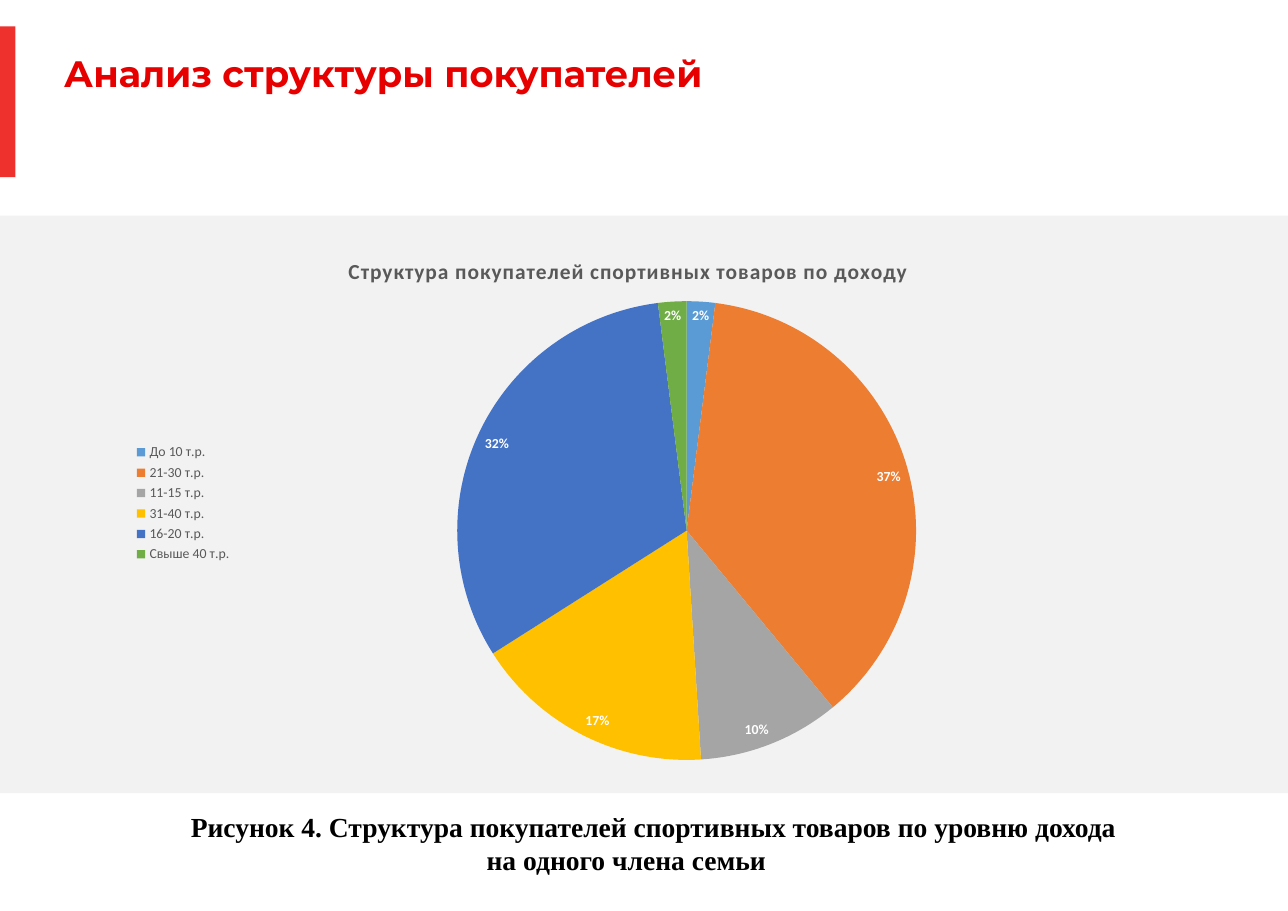
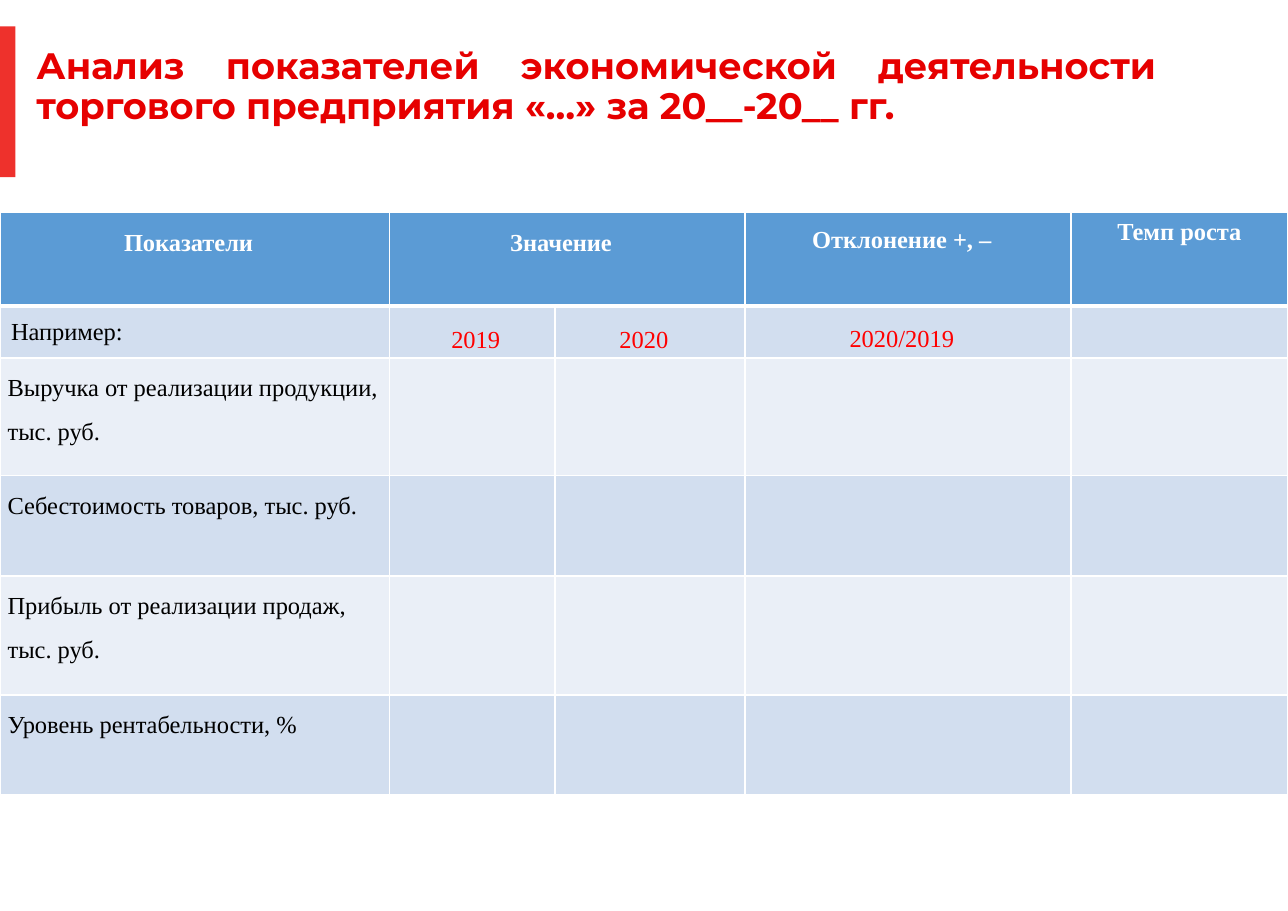
from dataclasses import dataclass, replace

from lxml.etree import SubElement
from pptx import Presentation
from pptx.chart.data import CategoryChartData
from pptx.dml.color import RGBColor
from pptx.enum.chart import XL_CHART_TYPE, XL_LABEL_POSITION, XL_LEGEND_POSITION
from pptx.enum.shapes import MSO_SHAPE
from pptx.enum.text import MSO_ANCHOR, MSO_AUTO_SIZE, PP_ALIGN
from pptx.oxml.ns import qn
from pptx.oxml.xmlchemy import BaseOxmlElement
from pptx.presentation import Presentation as Deck
from pptx.slide import Slide
from pptx.table import _Cell as Cell
from pptx.text.text import Font, TextFrame
from pptx.util import Pt

COLORS = {
    "title": "E60000", "bar": "EE312C", "band": "F2F2F2",
    "black": "000000", "white": "FFFFFF", "red": "FF0000", "gray": "595959",
    "header": "5B9BD5", "dark row": "D2DEEF", "light row": "EAEFF7",
}
SLIDE_WIDTH, SLIDE_HEIGHT = 841.68, 595.44
TITLE_ONLY_LAYOUT = 5


@dataclass(frozen=True)
class Box:
    left: float
    top: float
    width: float
    height: float

    def lengths(self) -> tuple[Pt, Pt, Pt, Pt]:
        return Pt(self.left), Pt(self.top), Pt(self.width), Pt(self.height)


@dataclass(frozen=True)
class TextStyle:
    font: str
    size: float
    color: str
    bold: bool = False
    align: PP_ALIGN = PP_ALIGN.LEFT
    line_spacing: float = 1.0
    space_after: float = 0
    indent: float = 0


@dataclass(frozen=True)
class Margins:
    left: float
    top: float
    right: float
    bottom: float


@dataclass(frozen=True)
class Entry:
    """Text of one table cell with its look."""
    text: str
    style: TextStyle
    margins: Margins
    anchor: MSO_ANCHOR = MSO_ANCHOR.TOP


@dataclass(frozen=True)
class Slice:
    category: str
    percent: int
    color: str


BANDS = (
    (Box(0, 141, SLIDE_WIDTH, 377.5), "band"),
    (Box(0, 17.3, 10, 98.6), "bar"),
)
TITLE = TextStyle("Montserrat", 24, "title", True, line_spacing=0.9)
CAPTION = TextStyle("Times New Roman", 18, "black", True, PP_ALIGN.CENTER, indent=35.4)
BODY = TextStyle("Times New Roman", 16, "black", line_spacing=1.61, space_after=0.6)
YEAR = replace(BODY, color="red")
HEADER = replace(BODY, color="white", bold=True, align=PP_ALIGN.CENTER)

DEFAULT_MARGINS = Margins(7.2, 3.6, 7.2, 3.6)
BODY_MARGINS = Margins(5, 0, 5, 0)
CENTERED_MARGINS = Margins(5, 0, 13, 0)

SLICES = (
    Slice("До 10 т.р.", 2, "5B9BD5"),
    Slice("21-30 т.р.", 37, "ED7D31"),
    Slice("11-15 т.р.", 10, "A5A5A5"),
    Slice("31-40 т.р.", 17, "FFC000"),
    Slice("16-20 т.р.", 32, "4472C4"),
    Slice("Свыше 40 т.р.", 2, "70AD47"),
)

COLUMN_WIDTHS = (254.5, 108.3, 124, 213.1, 141.78)
ROW_HEIGHTS = (61, 34, 77, 65.5, 77.8, 65.3)
INDICATORS = (
    "Выручка от реализации продукции, тыс. руб.",
    "Себестоимость товаров, тыс. руб.",
    "Прибыль от реализации продаж, тыс. руб.",
    "Уровень рентабельности, %",
)
MIDDLE = MSO_ANCHOR.MIDDLE
ENTRIES = {
    (0, 0): Entry("Показатели", HEADER, CENTERED_MARGINS),
    (0, 1): Entry("Значение", HEADER, CENTERED_MARGINS),
    (0, 3): Entry("Отклонение +, –", replace(HEADER, line_spacing=1.5), CENTERED_MARGINS),
    (0, 4): Entry("Темп роста", replace(HEADER, line_spacing=1, space_after=0), DEFAULT_MARGINS),
    (1, 0): Entry("Например:", replace(BODY, line_spacing=1, space_after=0),
                  DEFAULT_MARGINS, MIDDLE),
    (1, 1): Entry("2019", replace(YEAR, indent=35.4), BODY_MARGINS, MIDDLE),
    (1, 2): Entry("2020", replace(YEAR, align=PP_ALIGN.CENTER), CENTERED_MARGINS, MIDDLE),
    (1, 3): Entry("2020/2019", replace(YEAR, align=PP_ALIGN.CENTER, line_spacing=1.5),
                  CENTERED_MARGINS, MIDDLE),
} | {(row, 0): Entry(text, BODY, BODY_MARGINS) for row, text in enumerate(INDICATORS, 2)}


def rgb(name: str) -> RGBColor:
    return RGBColor.from_string(COLORS[name])


def format_font(font: Font, name: str, size: float, color: str, bold: bool = False) -> None:
    font.name, font.size, font.bold = name, Pt(size), bold
    font.color.rgb = rgb(color)


def write_text(frame: TextFrame, text: str, style: TextStyle) -> None:
    paragraph = frame.paragraphs[0]
    if style.indent:
        paragraph._p.get_or_add_pPr().set("indent", str(Pt(style.indent)))
    paragraph.alignment = style.align
    paragraph.line_spacing = style.line_spacing
    paragraph.space_before, paragraph.space_after = Pt(0), Pt(style.space_after)
    run = paragraph.add_run()
    run.text = text
    format_font(run.font, style.font, style.size, style.color, style.bold)


def add_titled_slide(presentation: Deck, title: str, box: Box, align: PP_ALIGN) -> Slide:
    slide = presentation.slides.add_slide(presentation.slide_layouts[TITLE_ONLY_LAYOUT])
    for band, color in BANDS:
        shape = slide.shapes.add_shape(MSO_SHAPE.RECTANGLE, *band.lengths())
        shape.shadow.inherit = False
        shape.fill.solid()
        shape.fill.fore_color.rgb = rgb(color)
        shape.line.fill.background()
    placeholder = slide.shapes.title
    placeholder.left, placeholder.top, placeholder.width, placeholder.height = box.lengths()
    frame = placeholder.text_frame
    frame.margin_left = frame.margin_top = frame.margin_right = frame.margin_bottom = 0
    frame.vertical_anchor = MSO_ANCHOR.MIDDLE
    frame.word_wrap = True
    frame.auto_size = MSO_AUTO_SIZE.NONE
    write_text(frame, title, replace(TITLE, align=align))
    return slide


def place_chart_part(part: BaseOxmlElement, position: int, **fractions: float) -> None:
    """Fix a chart part at fractions of the chart's size."""
    for layout in part.findall(qn("c:layout")):
        part.remove(layout)
    layout = SubElement(part, qn("c:layout"))
    part.insert(position, layout)
    manual = SubElement(layout, qn("c:manualLayout"))
    if "w" in fractions:
        SubElement(manual, qn("c:layoutTarget")).set("val", "inner")
    for axis in ("x", "y"):
        SubElement(manual, qn(f"c:{axis}Mode")).set("val", "edge")
    for key, value in fractions.items():
        SubElement(manual, qn(f"c:{key}")).set("val", str(value))


def add_income_chart(slide: Slide, box: Box) -> None:
    data = CategoryChartData()
    data.categories = [item.category for item in SLICES]
    data.add_series("Series 1", [item.percent for item in SLICES])
    chart = slide.shapes.add_chart(XL_CHART_TYPE.PIE, *box.lengths(), data).chart
    format_font(chart.font, "Calibri", 10, "black")

    chart.has_title = True
    run = chart.chart_title.text_frame.paragraphs[0].add_run()
    run.text = "Структура покупателей спортивных товаров по доходу"
    format_font(run.font, "Calibri", 14, "gray", True)
    run.font._element.set("spc", "50")
    place_chart_part(chart.element.find(".//" + qn("c:title")), 1, x=0.22, y=0.04)
    place_chart_part(chart.element.find(".//" + qn("c:plotArea")), 0,
                     x=0.33, y=0.13, w=0.46, h=0.84)

    chart.has_legend = True
    chart.legend.position = XL_LEGEND_POSITION.LEFT
    chart.legend.include_in_layout = False
    format_font(chart.legend.font, "Calibri", 9, "gray")

    plot = chart.plots[0]
    plot.vary_by_categories = True
    for index, item in enumerate(SLICES):
        point = plot.series[0].points[index]
        point.format.fill.solid()
        point.format.fill.fore_color.rgb = RGBColor.from_string(item.color)
        point.format.line.fill.background()
    plot.has_data_labels = True
    labels = plot.data_labels
    labels.show_percentage, labels.show_value = True, False
    labels.number_format, labels.number_format_is_linked = "0%", False
    labels.position = XL_LABEL_POSITION.INSIDE_END
    format_font(labels.font, "Calibri", 9, "white", True)


def add_caption(slide: Slide, text: str, box: Box) -> None:
    frame = slide.shapes.add_textbox(*box.lengths()).text_frame
    frame.word_wrap = True
    write_text(frame, text, CAPTION)


def format_cell(cell: Cell, fill: str, bottom_width: float) -> None:
    properties = cell._tc.get_or_add_tcPr()
    for side, width in (("L", 1), ("R", 1), ("T", 1), ("B", bottom_width)):
        line = SubElement(properties, qn(f"a:ln{side}"), w=str(Pt(width)))
        color = SubElement(SubElement(line, qn("a:solidFill")), qn("a:srgbClr"))
        color.set("val", COLORS["white"])
    cell.fill.solid()
    cell.fill.fore_color.rgb = rgb(fill)


def add_indicator_table(slide: Slide, left: float, top: float) -> None:
    box = Box(left, top, sum(COLUMN_WIDTHS), sum(ROW_HEIGHTS))
    table = slide.shapes.add_table(len(ROW_HEIGHTS), len(COLUMN_WIDTHS), *box.lengths()).table
    for column, width in zip(table.columns, COLUMN_WIDTHS):
        column.width = Pt(width)
    for row_index, height in enumerate(ROW_HEIGHTS):
        table.rows[row_index].height = Pt(height)
        row_fill = "dark row" if row_index % 2 else "light row"
        for column_index in range(len(COLUMN_WIDTHS)):
            cell = table.cell(row_index, column_index)
            if row_index == 0:
                format_cell(cell, "header", 3)
            else:
                format_cell(cell, row_fill, 1)
    table.cell(0, 1).merge(table.cell(0, 2))
    for (row_index, column_index), entry in ENTRIES.items():
        cell = table.cell(row_index, column_index)
        margins = entry.margins
        cell.margin_left, cell.margin_top = Pt(margins.left), Pt(margins.top)
        cell.margin_right, cell.margin_bottom = Pt(margins.right), Pt(margins.bottom)
        cell.vertical_anchor = entry.anchor
        write_text(cell.text_frame, entry.text, entry.style)


def main() -> None:
    presentation = Presentation()
    presentation.slide_width, presentation.slide_height = Pt(SLIDE_WIDTH), Pt(SLIDE_HEIGHT)

    customers = add_titled_slide(presentation, "Анализ структуры покупателей",
                                 Box(41.8, 36.7, 762.5, 26), PP_ALIGN.LEFT)
    add_income_chart(customers, Box(80.6, 150.5, 657.4, 357))
    add_caption(customers,
                "Рисунок 4. Структура покупателей спортивных товаров по уровню дохода "
                "на одного члена семьи",
                Box(80.6, 526, 657.4, 50))

    economics = add_titled_slide(
        presentation,
        "Анализ показателей экономической деятельности "
        "торгового предприятия «…» за 20__-20__ гг.",
        Box(23.8, 31, 731.5, 52.5), PP_ALIGN.JUSTIFY)
    add_indicator_table(economics, 0, 139)

    presentation.save("out.pptx")


if __name__ == "__main__":
    main()
